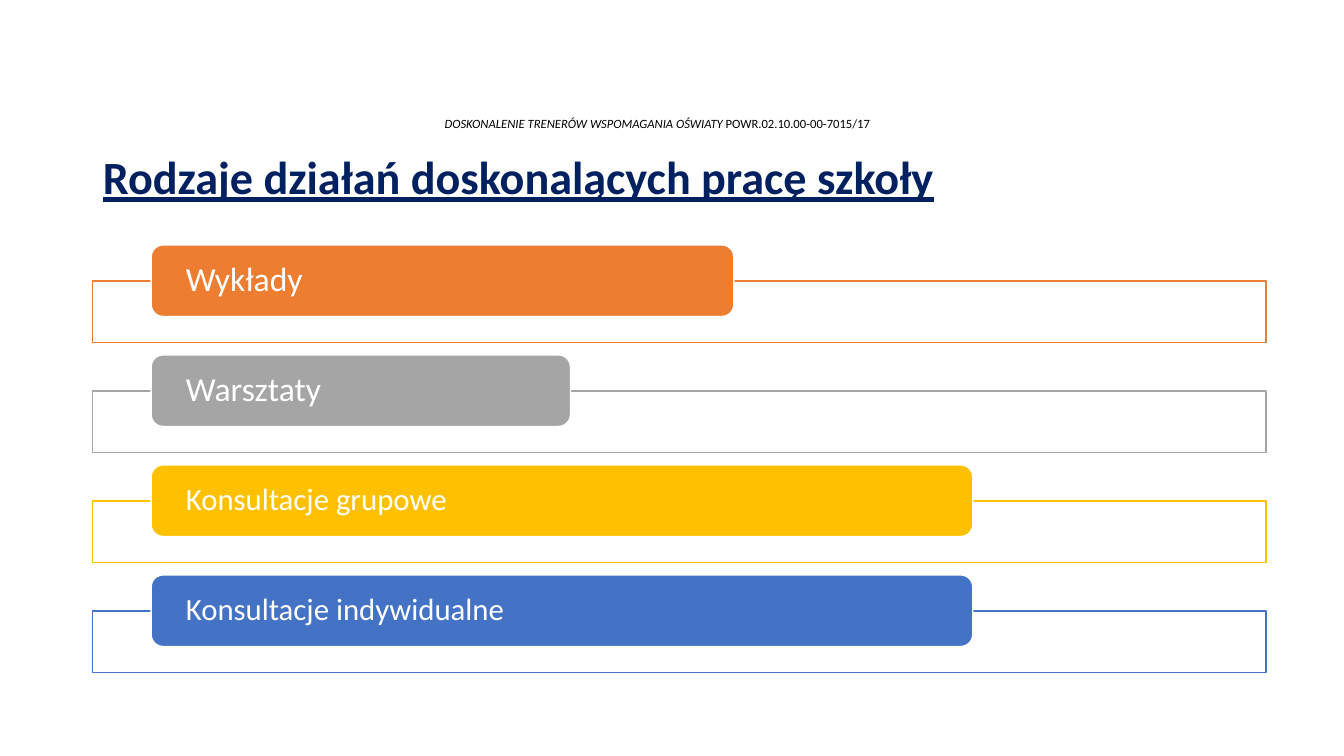
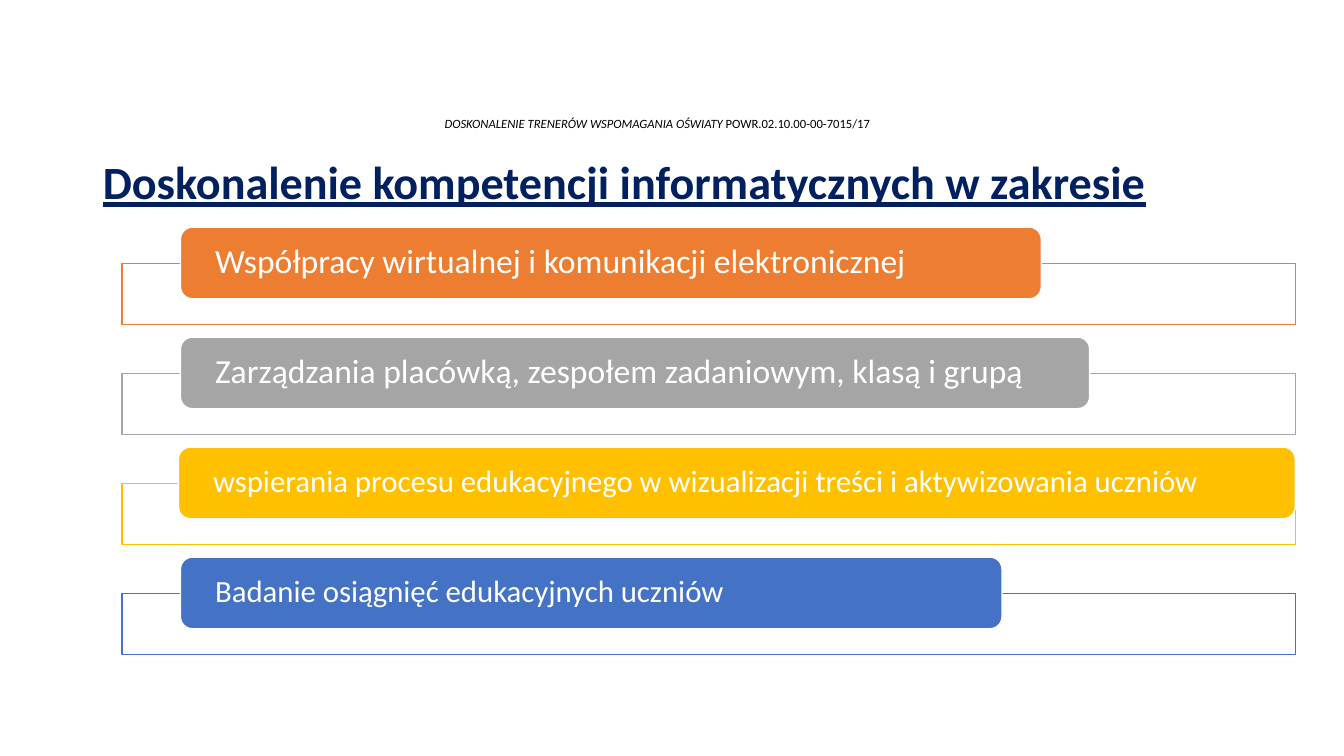
from pptx import Presentation
from pptx import util as u
from pptx.dml.color import RGBColor
from pptx.enum import shapes, text

WIDE, HIGH = u.Inches(13.333), u.Inches(7.5)
COL, ROW = WIDE / 100, HIGH / 100

WHITE = RGBColor(0xFF, 0xFF, 0xFF)
BLACK = RGBColor(0x00, 0x00, 0x00)
NAVY = RGBColor(0x00, 0x20, 0x60)
HUES = (
    RGBColor(0xED, 0x7D, 0x31),
    RGBColor(0xA5, 0xA5, 0xA5),
    RGBColor(0xFF, 0xC0, 0x00),
    RGBColor(0x44, 0x72, 0xC4),
)
SIZES = (24, 24, 22, 22)

PITCH = 14.55
DROP = 4.77
BAR_H, FRAME_H, FRAME_W = 9.47, 8.13, 87.3

HEAD = {"size": u.Pt(9)}
TITLE = {"size": u.Pt(33), "bold": True, "underline": True}
MIDDLE = {
    "word_wrap": True,
    "auto_size": text.MSO_AUTO_SIZE.NONE,
    "vertical_anchor": text.MSO_ANCHOR.MIDDLE,
}
INSET = {
    "margin_left": u.Inches(0.31),
    "margin_right": u.Inches(0.31),
    "margin_top": 0,
    "margin_bottom": 0,
}
HEAD_BOX = {"word_wrap": True, "margin_top": u.Inches(0.71)}
LEFT = {"line_spacing": 0.9, "alignment": text.PP_ALIGN.LEFT}
CENTRE = {"line_spacing": 0.9, "alignment": text.PP_ALIGN.CENTER}

DECK = (
    {
        "title": "Rodzaje działań doskonalących pracę szkoły",
        "title_row": 17.07,
        "left": 6.9,
        "top": 32.4,
        "bars": (
            ("Wykłady", 4.35, 43.35),
            ("Warsztaty", 4.35, 31.2),
            ("Konsultacje grupowe", 4.35, 61.13),
            ("Konsultacje indywidualne", 4.35, 61.13),
        ),
    },
    {
        "title": "Doskonalenie kompetencji informatycznych w zakresie",
        "title_row": 17.73,
        "left": 9.08,
        "top": 30.05,
        "bars": (
            ("Współpracy wirtualnej i komunikacji elektronicznej", 4.35, 64.05),
            ("Zarządzania placówką, zespołem zadaniowym, klasą i grupą", 4.35, 67.65),
            ("wspierania procesu edukacyjnego w wizualizacji treści i aktywizowania uczniów", 4.2, 83.1),
            ("Badanie osiągnięć edukacyjnych uczniów", 4.35, 61.13),
        ),
    },
)


def put(item, form):
    for key, value in form.items():
        setattr(item, key, value)


def area(x, y, w, h):
    return [round(n) for n in (x * COL, y * ROW, w * COL, h * ROW)]


def write(para, words, hue, form):
    run = para.add_run()
    run.text = words
    put(run.font, {"name": "Calibri", **form})
    run.font.color.rgb = hue


def fill(frame, words, hue, form, layout):
    put(frame, layout)
    para = frame.paragraphs[0]
    put(para, LEFT)
    write(para, words, hue, form)


def block(slide, kind, place, inside, edge):
    shape = slide.shapes.add_shape(kind, *area(*place))
    shape.shadow.inherit = False
    shape.fill.solid()
    shape.fill.fore_color.rgb = inside
    shape.line.color.rgb = edge
    shape.line.width = u.Pt(1)
    return shape


def header(slide, master):
    box = slide.shapes.add_textbox(*area(5.93, 6.13, 85.95, 16.27))
    put(box.text_frame, HEAD_BOX)
    para = box.text_frame.paragraphs[0]
    put(para, CENTRE)
    write(para, "DOSKONALENIE TRENERÓW WSPOMAGANIA OŚWIATY ", BLACK, {**HEAD, "italic": True})
    write(para, "POWR.02.10.00-00-7015/17", BLACK, HEAD)
    master.shapes[0].element.getparent().append(box.element)


def heading(slide, words, row):
    title = slide.shapes.title
    place = area(6.9, row, 86.25, 13.47)
    put(title, dict(zip(("left", "top", "width", "height"), place)))
    fill(title.text_frame, words, NAVY, TITLE, MIDDLE)


def bars(slide, left, top, items):
    kinds = shapes.MSO_SHAPE
    for i, ((words, indent, width), hue, size) in enumerate(zip(items, HUES, SIZES)):
        y = top + i * PITCH
        block(slide, kinds.RECTANGLE, (left, y + DROP, FRAME_W, FRAME_H), WHITE, hue)
        place = (left + indent, y, width, BAR_H)
        bar = block(slide, kinds.ROUNDED_RECTANGLE, place, hue, WHITE)
        fill(bar.text_frame, words, WHITE, {"size": u.Pt(size)}, {**MIDDLE, **INSET})


def main():
    prs = Presentation()
    put(prs, {"slide_width": WIDE, "slide_height": HIGH})
    for page in DECK:
        slide = prs.slides.add_slide(prs.slide_layouts[5])
        heading(slide, page["title"], page["title_row"])
        bars(slide, page["left"], page["top"], page["bars"])
    header(prs.slides[0], prs.slide_master)
    prs.save("out.pptx")


if __name__ == "__main__":
    main()
